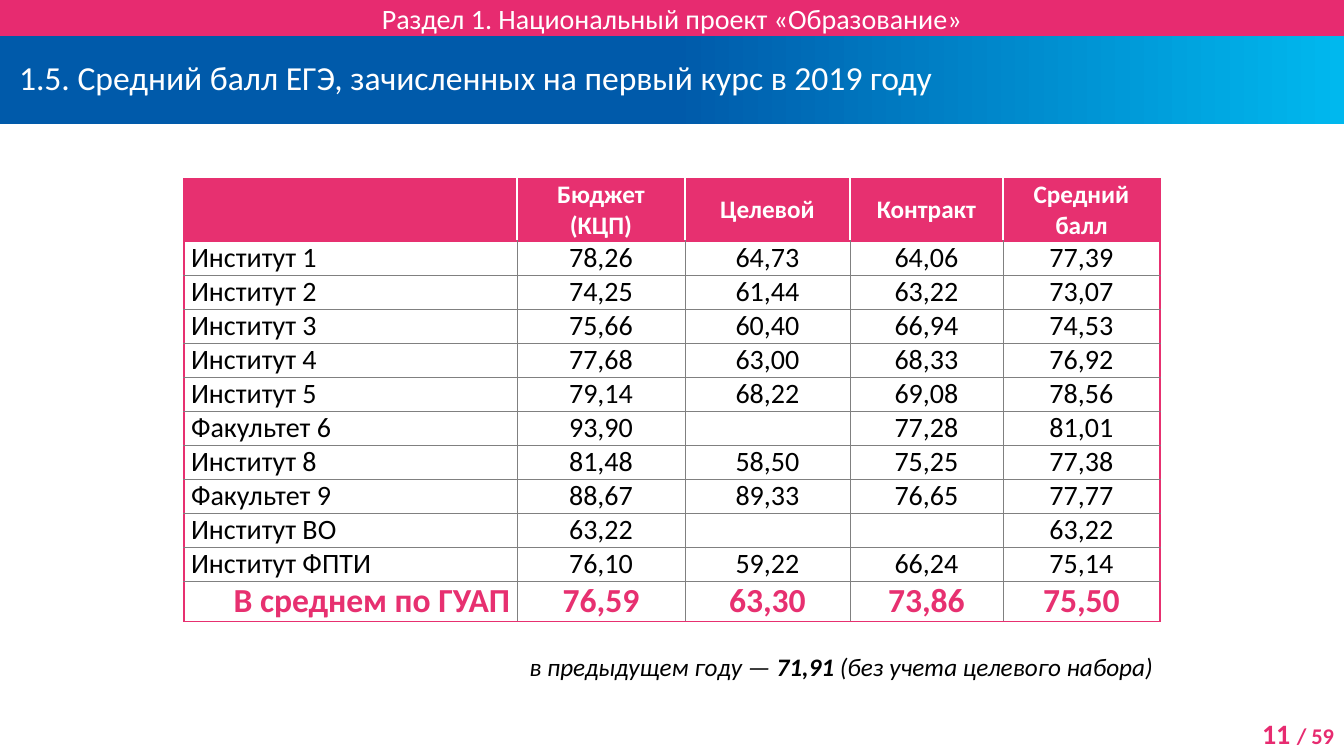
from copy import deepcopy
from dataclasses import dataclass

from lxml import etree
from pptx import Presentation, util as u
from pptx.dml.color import RGBColor
from pptx.enum import shapes, text
from pptx.oxml import ns

EMU_PER_PX = 914400 / 100.8
FONT = "Calibri"
COLORS = {"band": "E72B70", "pink": "E73070", "blue": "005AAA", "sky": "00B8EE",
          "grid": "808080", "white": "FFFFFF", "black": "000000"}
LEFT, CENTER, RIGHT = text.PP_ALIGN.LEFT, text.PP_ALIGN.CENTER, text.PP_ALIGN.RIGHT
TOP, MIDDLE, BOTTOM = text.MSO_ANCHOR.TOP, text.MSO_ANCHOR.MIDDLE, text.MSO_ANCHOR.BOTTOM

COLUMN_WIDTHS = [333, 168, 165, 153, 157]
HEADER_HEIGHT, BODY_HEIGHT, TOTAL_HEIGHT, NOTE_HEIGHT = 62, 34, 41, 62
HEADER = ["", "Бюджет (КЦП)", "Целевой", "Контракт", "Средний балл"]
SCORES = [
    ["Институт 1", "78,26", "64,73", "64,06", "77,39"],
    ["Институт 2", "74,25", "61,44", "63,22", "73,07"],
    ["Институт 3", "75,66", "60,40", "66,94", "74,53"],
    ["Институт 4", "77,68", "63,00", "68,33", "76,92"],
    ["Институт 5", "79,14", "68,22", "69,08", "78,56"],
    ["Факультет 6", "93,90", "", "77,28", "81,01"],
    ["Институт 8", "81,48", "58,50", "75,25", "77,38"],
    ["Факультет 9", "88,67", "89,33", "76,65", "77,77"],
    ["Институт ВО", "63,22", "", "", "63,22"],
    ["Институт ФПТИ", "76,10", "59,22", "66,24", "75,14"],
]
TOTAL = ["В среднем по ГУАП", "76,59", "63,30", "73,86", "75,50"]


@dataclass
class Span:
    words: str
    size: int
    color: str
    bold: bool = False
    italic: bool = False


@dataclass
class Band:
    top: int
    height: int
    inset: int
    align: text.PP_ALIGN
    span: Span


@dataclass
class RowStyle:
    size: int
    color: str
    bold: bool
    label_align: text.PP_ALIGN
    label_anchor: text.MSO_ANCHOR
    value_anchor: text.MSO_ANCHOR


HEADER_STYLE = RowStyle(18, "white", True, CENTER, MIDDLE, MIDDLE)
BODY_STYLE = RowStyle(20, "black", False, LEFT, TOP, BOTTOM)
TOTAL_STYLE = RowStyle(24, "pink", True, RIGHT, TOP, BOTTOM)


def px(length: int) -> u.Emu:
    return u.Emu(round(length * EMU_PER_PX))


def rgb(name: str) -> RGBColor:
    return RGBColor.from_string(COLORS[name])


def write(para, spans: list[Span], align: text.PP_ALIGN) -> None:
    para.alignment = align
    for span in spans:
        run = para.add_run()
        run.text = span.words
        run.font.name = FONT
        run.font.size = u.Pt(span.size)
        run.font.bold = span.bold
        run.font.italic = span.italic
        run.font.color.rgb = rgb(span.color)


def set_insets(holder, side: int) -> None:
    holder.margin_left = holder.margin_right = px(side)
    holder.margin_top = holder.margin_bottom = 0


def add_band(page, band: Band, width: int):
    box = page.shapes.add_shape(shapes.MSO_SHAPE.RECTANGLE, 0, px(band.top),
                                px(width), px(band.height))
    box.shadow.inherit = False
    box.line.fill.background()
    frame = box.text_frame
    frame.word_wrap = True
    frame.vertical_anchor = MIDDLE
    set_insets(frame, band.inset)
    write(frame.paragraphs[0], [band.span], band.align)
    return box


def fill_gradient(box) -> None:
    box.fill.gradient()
    box.fill.gradient_angle = 0
    first = box._element.spPr.find(".//" + ns.qn("a:gs"))
    first.addnext(deepcopy(first))
    stops = [(0, "blue"), (0.5, "blue"), (1, "sky")]
    for stop, (position, color) in zip(box.fill.gradient_stops, stops):
        stop.position = position
        stop.color.rgb = rgb(color)


def set_borders(cell, borders: dict[str, tuple[str, float] | None]) -> None:
    properties = cell._tc.get_or_add_tcPr()
    for place, side in enumerate("LRTB"):
        line = etree.Element(ns.qn(f"a:ln{side}"))
        properties.insert(place, line)
        if borders.get(side) is None:
            etree.SubElement(line, ns.qn("a:noFill"))
            continue
        color, width = borders[side]
        line.set("w", str(u.Pt(width)))
        solid = etree.SubElement(line, ns.qn("a:solidFill"))
        etree.SubElement(solid, ns.qn("a:srgbClr"), val=COLORS[color])


def cell_borders(row: int, column: int) -> dict[str, tuple[str, float] | None]:
    edge, grid = ("pink", 1), ("grid", 0.25)
    inner = ("white", 1) if row == 0 else grid
    return {
        "L": edge if column == 0 else inner,
        "R": edge if column == len(HEADER) - 1 else inner,
        "T": edge if row <= 1 else grid,
        "B": edge if row in (0, len(SCORES) + 1) else grid,
    }


def add_scores(page, left: int, top: int) -> None:
    lines = [(HEADER, HEADER_STYLE), *((line, BODY_STYLE) for line in SCORES),
             (TOTAL, TOTAL_STYLE)]
    heights = [HEADER_HEIGHT, *[BODY_HEIGHT] * len(SCORES), TOTAL_HEIGHT, NOTE_HEIGHT]
    table = page.shapes.add_table(len(heights), len(HEADER), px(left), px(top),
                                  px(sum(COLUMN_WIDTHS)), px(sum(heights))).table
    table.first_row = table.horz_banding = False
    for column, width in zip(table.columns, COLUMN_WIDTHS):
        column.width = px(width)
    for row, height in zip(table.rows, heights):
        row.height = px(height)
    for cell in table.iter_cells():
        cell.fill.background()
        set_insets(cell, 7)

    # Header, institutes and overall average
    for row, (words, style) in enumerate(lines):
        for column, word in enumerate(words):
            cell = table.cell(row, column)
            if row == 0:
                cell.fill.solid()
                cell.fill.fore_color.rgb = rgb("pink")
            set_borders(cell, cell_borders(row, column))
            cell.vertical_anchor = style.value_anchor if column else style.label_anchor
            if word:
                write(cell.text_frame.paragraphs[0],
                      [Span(word, style.size, style.color, style.bold)],
                      CENTER if column else style.label_align)

    # Note across the last row
    last = len(heights) - 1
    for column in range(len(HEADER)):
        set_borders(table.cell(last, column), {"T": ("pink", 1)})
    note = table.cell(last, 0)
    note.merge(table.cell(last, len(HEADER) - 1))
    note.vertical_anchor = BOTTOM
    write(note.text_frame.paragraphs[0], [
        Span("в предыдущем году — ", 18, "black", italic=True),
        Span("71,91 ", 18, "black", bold=True, italic=True),
        Span("(без учета целевого набора)", 18, "black", italic=True),
    ], RIGHT)


def add_page_number(page) -> None:
    box = page.shapes.add_textbox(px(1223), px(712), px(121), px(44))
    box.text_frame.word_wrap = True
    write(box.text_frame.paragraphs[0],
          [Span("11 ", 20, "band", True), Span("/ 59", 16, "band", True)], RIGHT)


def main() -> None:
    deck = Presentation()
    deck.slide_width, deck.slide_height = px(1344), px(756)
    page = deck.slides.add_slide(deck.slide_layouts[6])
    add_page_number(page)

    # Title and section bands
    title = add_band(page, Band(36, 88, 19, LEFT, Span(
        "1.5. Средний балл ЕГЭ, зачисленных на первый курс в 2019 году", 24, "white")), 1344)
    title.text_frame.paragraphs[0].line_spacing = u.Pt(24)
    fill_gradient(title)
    section = add_band(page, Band(0, 36, 0, CENTER, Span(
        "Раздел 1. Национальный проект «Образование»", 20, "white")), 1344)
    section.fill.solid()
    section.fill.fore_color.rgb = rgb("band")

    add_scores(page, 184, 179)
    deck.save("out.pptx")


if __name__ == "__main__":
    main()
